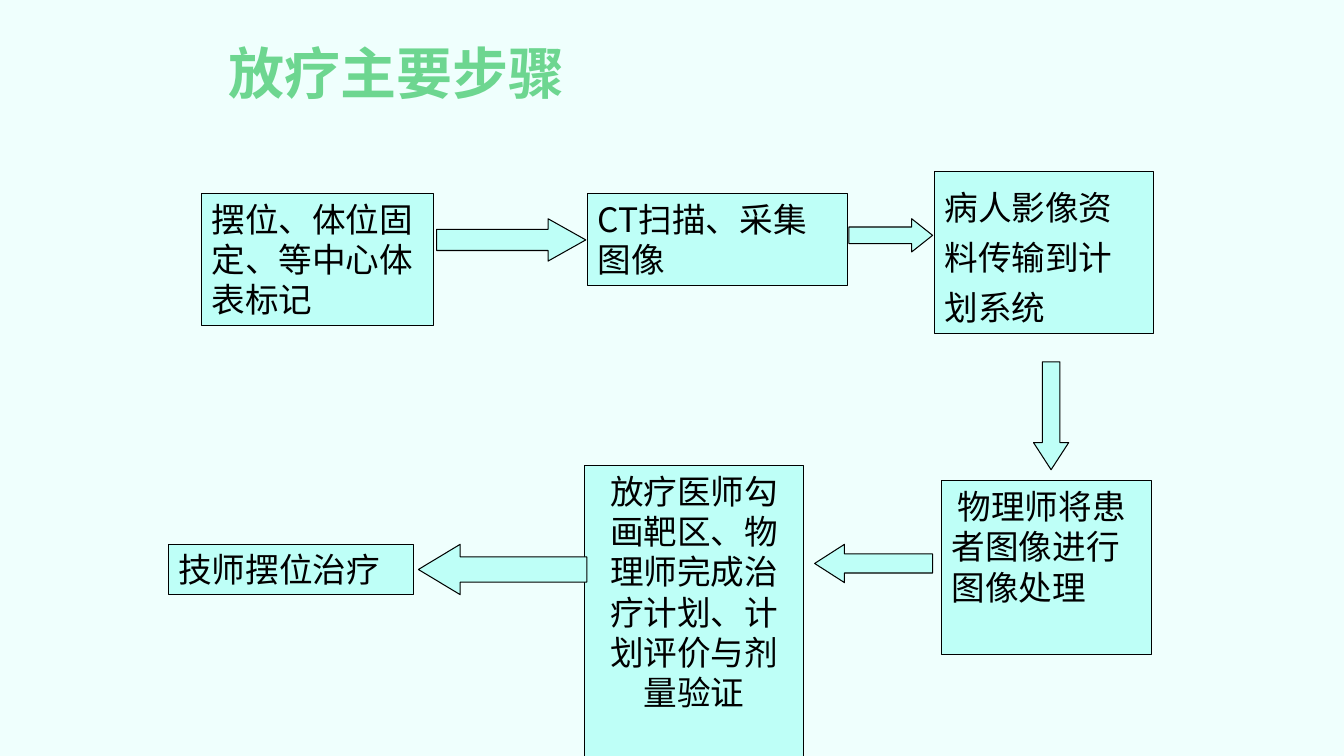
from dataclasses import dataclass

from lxml import etree
from pptx import Presentation
from pptx.dml.color import RGBColor
from pptx.enum.shapes import MSO_CONNECTOR, MSO_SHAPE
from pptx.enum.text import MSO_ANCHOR, PP_ALIGN
from pptx.oxml.ns import qn
from pptx.util import Emu, Pt

RECTANGLE = MSO_SHAPE.RECTANGLE
RIGHT = MSO_SHAPE.RIGHT_ARROW
LEFT = MSO_SHAPE.LEFT_ARROW
DOWN = MSO_SHAPE.DOWN_ARROW
STRAIGHT = MSO_CONNECTOR.STRAIGHT
TOP = MSO_ANCHOR.TOP
ALIGN_LEFT = PP_ALIGN.LEFT
ALIGN_CENTER = PP_ALIGN.CENTER

PX_PER_INCH = 100
EMU_PER_PX = 914400 // PX_PER_INCH
SANS = "Noto Sans CJK SC"
SERIF = "Times New Roman"
BACKGROUND = "EFFFFD"
PANEL = "BEFFF7"
INK = "000000"
TITLE_GREEN = "6DD690"


@dataclass(frozen=True)
class Step:
    text: str
    left: int
    top: int
    width: int
    height: int
    font: str = SANS
    align: PP_ALIGN = ALIGN_LEFT
    line_spacing: float = 1.0
    indent: int = 0


@dataclass(frozen=True)
class Arrow:
    kind: MSO_SHAPE
    left: int
    top: int
    width: int
    height: int
    head: float


STEPS = [
    Step("摆位、体位固定、等中心体表标记", 200, 192, 230, 131),
    Step("CT扫描、采集图像", 583, 192, 258, 91),
    Step("病人影像资料传输到计划系统", 927, 170, 217, 161, line_spacing=1.25),
    Step("物理师将患者图像进行图像处理", 934, 477, 208, 172, indent=6),
    Step("放疗医师勾画靶区、物理师完成治疗计划、计划评价与剂量验证",
         580, 462, 217, 293, font=SERIF, align=ALIGN_CENTER),
    Step("技师摆位治疗", 167, 540, 243, 50),
]

ARROWS = [
    Arrow(RIGHT, 433, 217, 148, 42, 0.89),
    Arrow(RIGHT, 842, 217, 83, 33, 0.63),
    Arrow(LEFT, 415, 540, 167, 50, 0.83),
    Arrow(LEFT, 808, 540, 117, 38, 0.78),
    Arrow(DOWN, 1025, 359, 35, 107, 0.77),
]


def px(length: int) -> Emu:
    return Emu(length * EMU_PER_PX)


def color(value: str) -> RGBColor:
    return RGBColor.from_string(value)


def write(box, text: str, size: int, ink: str, font: str = SANS, bold: bool = False):
    frame = box.text_frame
    frame.word_wrap = True
    frame.vertical_anchor = TOP
    para = frame.paragraphs[0]
    span = para.add_run()
    span.text = text
    para.font.name = font
    para.font.size = Pt(size)
    para.font.bold = bold
    para.font.color.rgb = color(ink)
    east_asian = etree.SubElement(span.font._element, qn("a:ea"))
    east_asian.set("typeface", SANS)
    return para


def draw_panel(page, kind: MSO_SHAPE, left: int, top: int, width: int, height: int):
    panel = page.shapes.add_shape(kind, px(left), px(top), px(width), px(height))
    panel.shadow.inherit = False
    panel.fill.solid()
    panel.fill.fore_color.rgb = color(PANEL)
    panel.line.color.rgb = color(INK)
    panel.line.width = Pt(0.75)
    return panel


def draw_step(page, step: Step) -> None:
    box = draw_panel(page, RECTANGLE, step.left, step.top, step.width, step.height)
    para = write(box, step.text, 24, INK, step.font)
    para.alignment = step.align
    para.line_spacing = step.line_spacing
    if step.indent:
        para._p.get_or_add_pPr().set("indent", str(px(step.indent)))


def draw_arrow(page, arrow: Arrow) -> None:
    shape = draw_panel(page, arrow.kind, arrow.left, arrow.top, arrow.width, arrow.height)
    shape.adjustments[0] = 0.5
    shape.adjustments[1] = arrow.head


def draw_edge(page, left: int, right: int, top: int) -> None:
    edge = page.shapes.add_connector(STRAIGHT, px(left), px(top), px(right), px(top))
    edge.line.color.rgb = color(INK)
    edge.line.width = Pt(0.75)
    etree.SubElement(edge._element.spPr, qn("a:effectLst"))


def main() -> None:
    deck = Presentation()
    deck.slide_width = px(1333)
    deck.slide_height = px(750)
    page = deck.slides.add_slide(deck.slide_layouts[6])
    page.background.fill.solid()
    page.background.fill.fore_color.rgb = color(BACKGROUND)

    title = page.shapes.add_textbox(px(217), px(33), px(412), px(77))
    write(title, "放疗主要步骤", 40, TITLE_GREEN, bold=True)
    for step in STEPS:
        draw_step(page, step)
    draw_edge(page, 580, 788, 462)
    for arrow in ARROWS:
        draw_arrow(page, arrow)

    deck.save("out.pptx")


if __name__ == "__main__":
    main()
